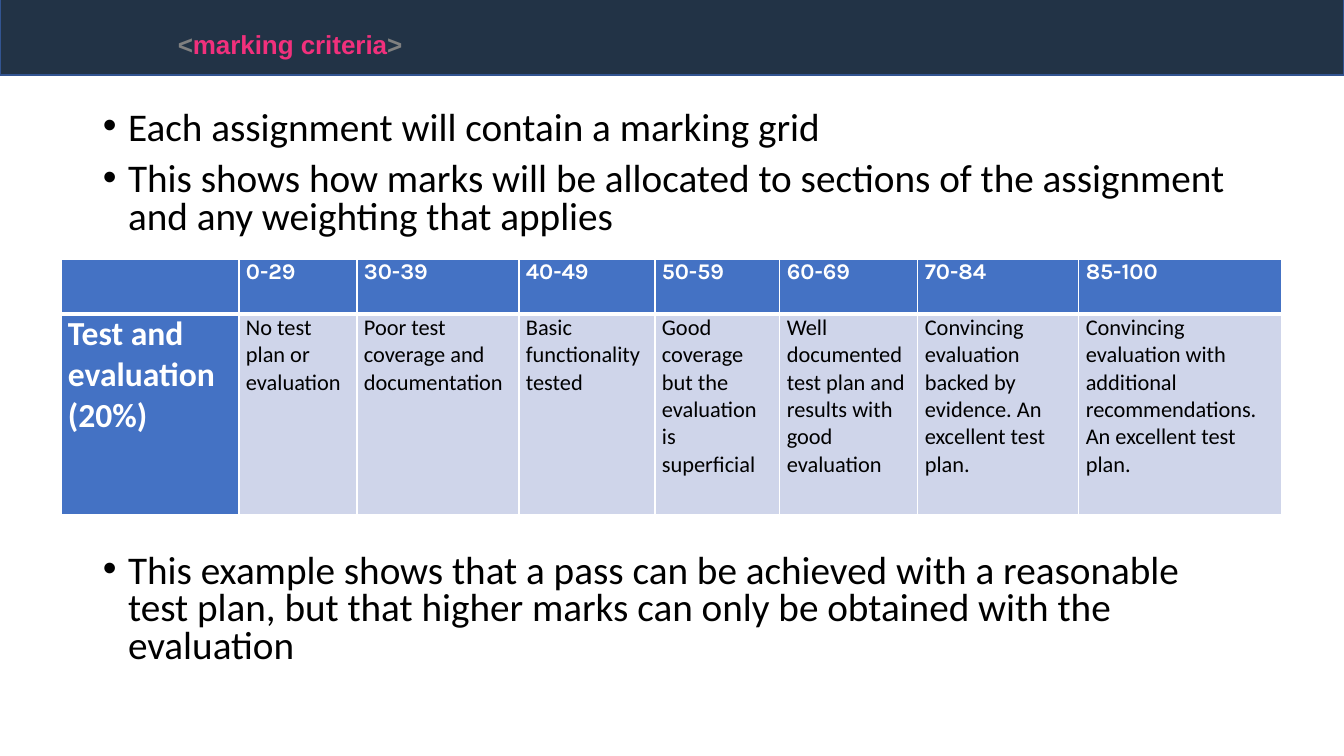
from dataclasses import dataclass

from lxml import etree
from pptx import Presentation
from pptx import util as u
from pptx.dml.color import RGBColor
from pptx.enum import shapes, text
from pptx.oxml.ns import qn

PX = 914400 / 100.8


@dataclass(frozen=True)
class Theme:
    """Colours, fonts and type sizes of the slide."""
    bar: str = "223346"
    bar_line: str = "325491"
    pink: str = "F1307C"
    grey: str = "808080"
    black: str = "000000"
    white: str = "FFFFFF"
    head: str = "4472C4"
    band: str = "CFD5EA"
    body_font: str = "Calibri"
    title_font: str = "Arial"
    grade_font: str = "Karla"
    title_size: int = 32
    body_size: int = 28
    section_size: int = 24
    cell_size: int = 16


T = Theme()
COLUMNS = [178, 118, 162, 136, 125, 138, 161, 203]
ROWS = [55, 201]
GRADES = ["0-29", "30-39", "40-49", "50-59", "60-69", "70-84", "85-100"]
SECTION = ["Test and evaluation", "(20%)"]
CRITERIA = [
    "No test plan or evaluation",
    "Poor test coverage and documentation",
    "Basic functionality tested",
    "Good coverage but the evaluation is superficial",
    "Well documented test plan and results with good evaluation",
    "Convincing evaluation backed by evidence. An excellent test plan.",
    "Convincing evaluation with additional recommendations. An excellent test plan.",
]
INTRO = [
    "Each assignment will contain a marking grid",
    "This shows how marks will be allocated to sections of the assignment "
    "and any weighting that applies",
]
EXAMPLE = [
    "This example shows that a pass can be achieved with a reasonable test plan, "
    "but that higher marks can only be obtained with the evaluation",
]


def px(n):
    """Turn pixels into EMU."""
    return u.Emu(round(n * PX))


def rgb(value):
    """Turn a hex string into a colour."""
    return RGBColor.from_string(value)


def add_run(p, words, font, size, color, bold=False):
    """Add one styled run to a paragraph."""
    r = p.add_run()
    r.text = words
    r.font.name, r.font.size, r.font.bold = font, u.Pt(size), bold
    r.font.color.rgb = rgb(color)
    return r


def add_header(s, x, y, w, h):
    """Draw the dark bar and the tag-like title on it."""
    bar = s.shapes.add_shape(shapes.MSO_SHAPE.RECTANGLE, px(x), px(y), px(w), px(h))
    bar.shadow.inherit = False
    bar.fill.solid()
    bar.fill.fore_color.rgb = rgb(T.bar)
    bar.line.color.rgb = rgb(T.bar_line)
    bar.line.width = u.Pt(1)
    tf = s.shapes.add_textbox(px(x + 168), px(y + 22), px(249), px(65)).text_frame
    tf.word_wrap = False
    p = tf.paragraphs[0]
    for words, color in [("<", T.grey), ("marking criteria", T.pink), (">", T.grey)]:
        r = add_run(p, words, T.title_font, T.title_size, color, True)
        r.font._element.set("baseline", "30000")


def add_bullets(s, items, x, y, w, h):
    """Place a bulleted list in the given box."""
    tf = s.shapes.add_textbox(px(x), px(y), px(w), px(h)).text_frame
    tf.word_wrap = True
    for i, item in enumerate(items):
        p = tf.add_paragraph() if i else tf.paragraphs[0]
        p.line_spacing = 0.8
        p.space_before = u.Pt(10 if i else 0)
        pPr = p._p.get_or_add_pPr()
        pPr.set("marL", str(u.Inches(0.25)))
        pPr.set("indent", str(-u.Inches(0.25)))
        etree.SubElement(pPr, qn("a:buFont"), typeface="Arial")
        etree.SubElement(pPr, qn("a:buChar"), char="•")
        add_run(p, item, T.body_font, T.body_size, T.black)


def style_cell(cell, fill, bottom):
    """Set the margins, white borders and fill of a cell."""
    cell.margin_left = cell.margin_right = px(7)
    cell.margin_top = cell.margin_bottom = 0
    cell.vertical_anchor = text.MSO_ANCHOR.TOP
    tcPr = cell._tc.get_or_add_tcPr()
    for side, width in [("L", 1), ("R", 1), ("T", 1), ("B", bottom)]:
        ln = etree.SubElement(tcPr, qn(f"a:ln{side}"), w=str(u.Pt(width)))
        solid = etree.SubElement(ln, qn("a:solidFill"))
        etree.SubElement(solid, qn("a:srgbClr"), val=T.white)
    cell.fill.solid()
    cell.fill.fore_color.rgb = rgb(fill)


def fill_cell(cell, lines, *style):
    """Write each line as a paragraph of a cell."""
    for i, line in enumerate(lines):
        tf = cell.text_frame
        p = tf.add_paragraph() if i else tf.paragraphs[0]
        add_run(p, line, *style)


def add_grid(s, x, y):
    """Build the marking grid with its top left corner at x, y."""
    table = s.shapes.add_table(len(ROWS), len(COLUMNS), px(x), px(y),
                               px(sum(COLUMNS)), px(sum(ROWS))).table
    table.horz_banding = False
    for column, width in zip(table.columns, COLUMNS):
        column.width = px(width)
    for row, height in zip(table.rows, ROWS):
        row.height = px(height)
    for i in range(len(ROWS)):
        for j in range(len(COLUMNS)):
            style_cell(table.cell(i, j), T.band if i and j else T.head, 1 if i else 3)
    fill_cell(table.cell(1, 0), SECTION, T.body_font, T.section_size, T.white, True)
    for j, (grade, criterion) in enumerate(zip(GRADES, CRITERIA), 1):
        fill_cell(table.cell(0, j), [grade], T.grade_font, T.cell_size, T.white, True)
        fill_cell(table.cell(1, j), [criterion], T.body_font, T.cell_size, T.black)


def main():
    """Build and save the slide."""
    prs = Presentation()
    prs.slide_width, prs.slide_height = px(1344), px(756)
    s = prs.slides.add_slide(prs.slide_layouts[6])
    add_header(s, 0, -4, 1344, 79)
    add_bullets(s, INTRO, 93, 106, 1159, 140)
    add_grid(s, 61, 259)
    add_bullets(s, EXAMPLE, 93, 549, 1159, 138)
    prs.save("out.pptx")


if __name__ == "__main__":
    main()
